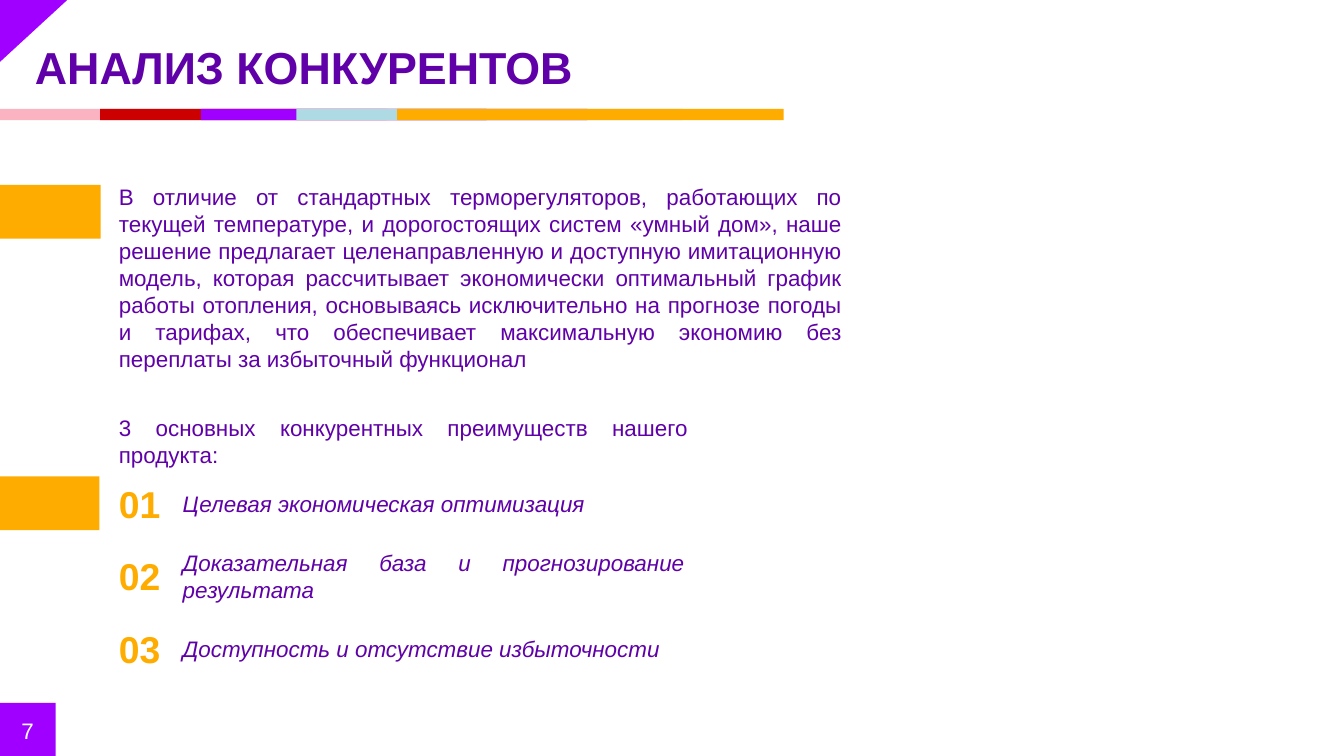
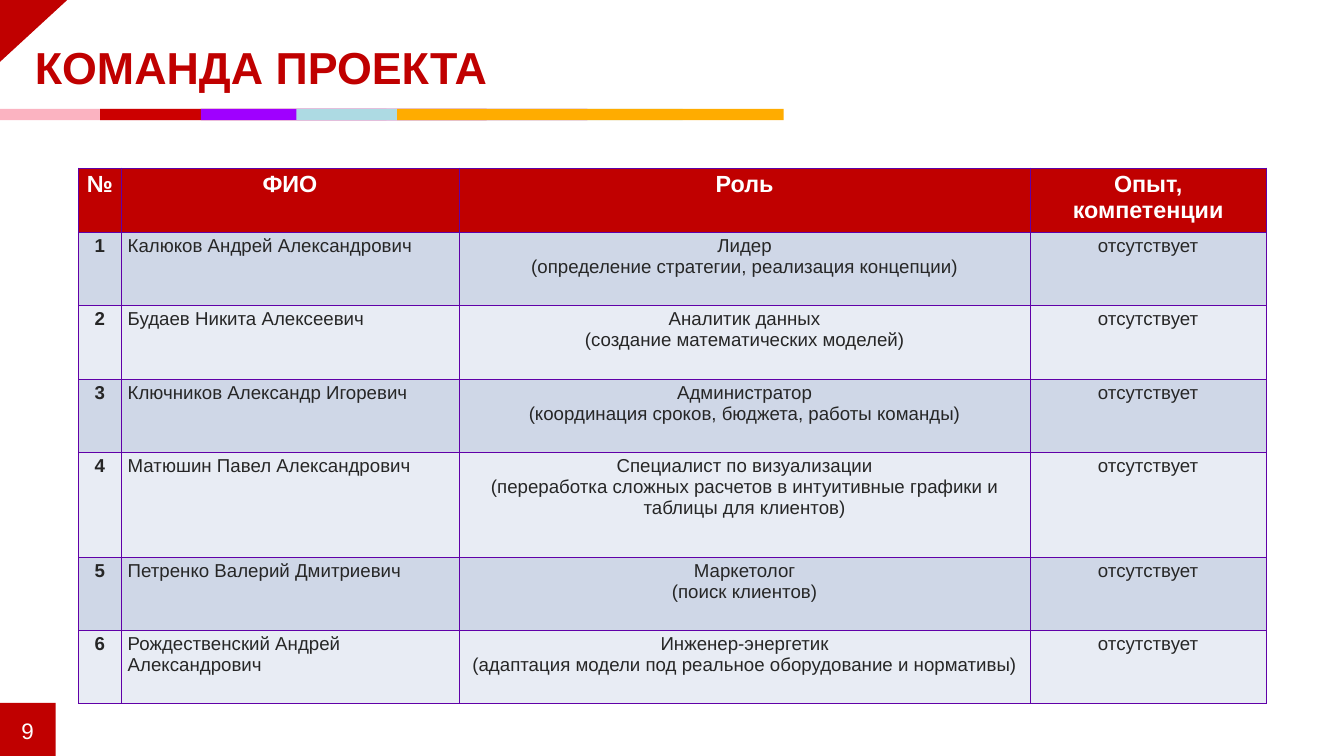
from collections import namedtuple
from dataclasses import dataclass

from lxml.etree import SubElement
from pptx import Presentation
from pptx.dml.color import RGBColor
from pptx.enum.shapes import MSO_SHAPE
from pptx.enum.text import MSO_ANCHOR, MSO_AUTO_SIZE, PP_ALIGN
from pptx.oxml.ns import qn
from pptx.util import Pt

PX = 9144  # 100 px to the inch

Box = namedtuple("Box", "x y w h")
SLIDE = Box(0, 0, 2000, 1125)


@dataclass(frozen=True)
class Theme:
    font: str = "Arial"
    purple: str = "6000A8"
    violet: str = "9F00FF"
    red: str = "C00000"
    orange: str = "FFAC00"
    white: str = "FFFFFF"
    ink: str = "262626"
    stripes: tuple = ("FBB3C1", "CC0000", "9F00FF", "ADDAE3", "FFAC00")
    rows: tuple = ("CFD7E7", "E8ECF4")
    title: int = 48
    number: int = 40
    body: int = 24
    head: int = 25
    cell: int = 20


T = Theme()

INTRO = (
    "В отличие от стандартных терморегуляторов, работающих по текущей температуре, "
    "и дорогостоящих систем «умный дом», наше решение предлагает целенаправленную "
    "и доступную имитационную модель, которая рассчитывает экономически оптимальный "
    "график работы отопления, основываясь исключительно на прогнозе погоды и тарифах, "
    "что обеспечивает максимальную экономию без переплаты за избыточный функционал"
)
LEAD = "3 основных конкурентных преимуществ нашего продукта:"
ADVANTAGES = [
    # text, height of its box
    ("Целевая экономическая оптимизация", 50),
    ("Доказательная база и прогнозирование результата", 91),
    ("Доступность и отсутствие избыточности", 50),
]

HEADINGS = ["№", "ФИО", "Роль", "Опыт, компетенции"]
EXPERIENCE = "отсутствует"
TEAM = [
    ("Калюков Андрей Александрович", "Лидер",
     "(определение стратегии, реализация концепции)"),
    ("Будаев Никита Алексеевич", "Аналитик данных",
     "(создание математических моделей)"),
    ("Ключников Александр Игоревич", "Администратор",
     "(координация сроков, бюджета, работы команды)"),
    ("Матюшин Павел Александрович", "Специалист по визуализации",
     "(переработка сложных расчетов в интуитивные графики и таблицы для клиентов)"),
    ("Петренко Валерий Дмитриевич", "Маркетолог", "(поиск клиентов)"),
    ("Рождественский Андрей Александрович", "Инженер-энергетик",
     "(адаптация модели под реальное оборудование и нормативы)"),
]
COL_WIDTHS = [63, 503, 850, 351]
ROW_HEIGHTS = [96, 109, 109, 109, 156, 109, 109]


def rgb(color):
    return RGBColor.from_string(color)


def emu(box):
    return [v * PX for v in box]


def style(p, size, color, bold=False, italic=False, align=PP_ALIGN.LEFT):
    p.alignment = align
    p.font.name = T.font
    p.font.size = Pt(size)
    p.font.bold = bold
    p.font.italic = italic
    p.font.color.rgb = rgb(color)


def add_block(s, box, color, kind=MSO_SHAPE.RECTANGLE):
    sp = s.shapes.add_shape(kind, *emu(box))
    sp.shadow.inherit = False
    sp.fill.solid()
    sp.fill.fore_color.rgb = rgb(color)
    sp.line.fill.background()
    return sp


def add_text(s, box, text, size, color, **look):
    tf = s.shapes.add_textbox(*emu(box)).text_frame
    tf.word_wrap = True
    tf.auto_size = MSO_AUTO_SIZE.SHAPE_TO_FIT_TEXT
    tf.text = text
    style(tf.paragraphs[0], size, color, **look)
    return tf


# Shared parts
def add_stripes(s, box):
    starts = (0, 149, 299, 441, 591)
    for start, color in zip(starts, T.stripes):
        add_block(s, Box(box.x + start, box.y, box.w - starts[-1], box.h), color)


def add_page_number(s, box, number, color):
    add_block(s, box, color)
    tf = add_text(s, Box(box.x + 8, box.y + 20, 70, 41), str(number), T.body, T.white,
                  align=PP_ALIGN.CENTER)
    tf.auto_size = MSO_AUTO_SIZE.NONE
    tf.vertical_anchor = MSO_ANCHOR.MIDDLE


def add_corner(s, box, color):
    sp = add_block(s, box, color, MSO_SHAPE.ISOSCELES_TRIANGLE)
    sp.adjustments[0] = 1
    sp.rotation = 180


def add_frame(prs, title, number, title_color, accent):
    s = prs.slides.add_slide(prs.slide_layouts[6])
    add_stripes(s, Box(0, 162, 1166, 17))
    add_text(s, Box(42, 54, 1738, 91), title, T.title, title_color, bold=True)
    add_page_number(s, Box(-2, SLIDE.h - 79, 85, 80), number, accent)
    add_corner(s, Box(0, 0, 100, 92), accent)
    return s


# Competitor analysis
def add_intro(s, box):
    add_block(s, Box(0, box.y + 7, 150, 80), T.orange)
    add_text(s, box, INTRO, T.body, T.purple, align=PP_ALIGN.JUSTIFY)


def add_advantages(s, box):
    add_text(s, Box(box.x, box.y, box.w, 91), LEAD, T.body, T.purple,
             align=PP_ALIGN.JUSTIFY)
    add_block(s, Box(-2, box.y + 98, 150, 80), T.orange)
    num_h, pitch = 77, 108
    for i, (text, h) in enumerate(ADVANTAGES):
        y = box.y + 100 + i * pitch
        add_text(s, Box(box.x, y, 126, num_h), f"{i + 1:02}", T.number, T.orange,
                 bold=True)
        add_text(s, Box(box.x + 95, y + (num_h - h) // 2, box.w - 100, h), text,
                 T.body, T.purple, italic=True, align=PP_ALIGN.JUSTIFY)


def competitors_slide(prs):
    s = add_frame(prs, "АНАЛИЗ КОНКУРЕНТОВ", 7, T.purple, T.violet)
    add_intro(s, Box(167, 268, 1095, 293))
    add_advantages(s, Box(167, 611, 866, 393))


# Project team
def set_borders(cell, color, width):
    tc_pr = cell._tc.get_or_add_tcPr()
    for i, tag in enumerate(("a:lnL", "a:lnR", "a:lnT", "a:lnB")):
        ln = SubElement(tc_pr, qn(tag), w=str(Pt(width)))
        fill = SubElement(ln, qn("a:solidFill"))
        SubElement(fill, qn("a:srgbClr"), val=color)
        tc_pr.insert(i, ln)  # borders come before the fill


def fill_cell(cell, text, fill, size, color, bold, align):
    cell.fill.solid()
    cell.fill.fore_color.rgb = rgb(fill)
    cell.margin_left = cell.margin_right = 10 * PX
    cell.margin_top = cell.margin_bottom = 5 * PX
    cell.text = text
    for p in cell.text_frame.paragraphs:
        style(p, size, color, bold=bold, align=align)
    set_borders(cell, T.purple, 1)


def add_team_table(s, box):
    rows = [HEADINGS]
    for i, (name, role, duty) in enumerate(TEAM, 1):
        rows.append([str(i), name, f"{role}\n{duty}", EXPERIENCE])
    table = s.shapes.add_table(len(rows), len(HEADINGS), *emu(box)).table
    for col, w in zip(table.columns, COL_WIDTHS):
        col.width = w * PX
    for row, h in zip(table.rows, ROW_HEIGHTS):
        row.height = h * PX
    for r, values in enumerate(rows):
        for c, text in enumerate(values):
            cell = table.cell(r, c)
            if r == 0:
                fill_cell(cell, text, T.red, T.head, T.white, True, PP_ALIGN.CENTER)
            else:
                align = PP_ALIGN.LEFT if c == 1 else PP_ALIGN.CENTER
                fill_cell(cell, text, T.rows[(r - 1) % 2], T.cell, T.ink, c == 0, align)


def team_slide(prs):
    s = add_frame(prs, "КОМАНДА ПРОЕКТА", 9, T.red, T.red)
    add_team_table(s, Box(117, 250, sum(COL_WIDTHS), sum(ROW_HEIGHTS)))


def main():
    prs = Presentation()
    prs.slide_width = SLIDE.w * PX
    prs.slide_height = SLIDE.h * PX
    competitors_slide(prs)
    team_slide(prs)
    prs.save("out.pptx")


if __name__ == "__main__":
    main()
